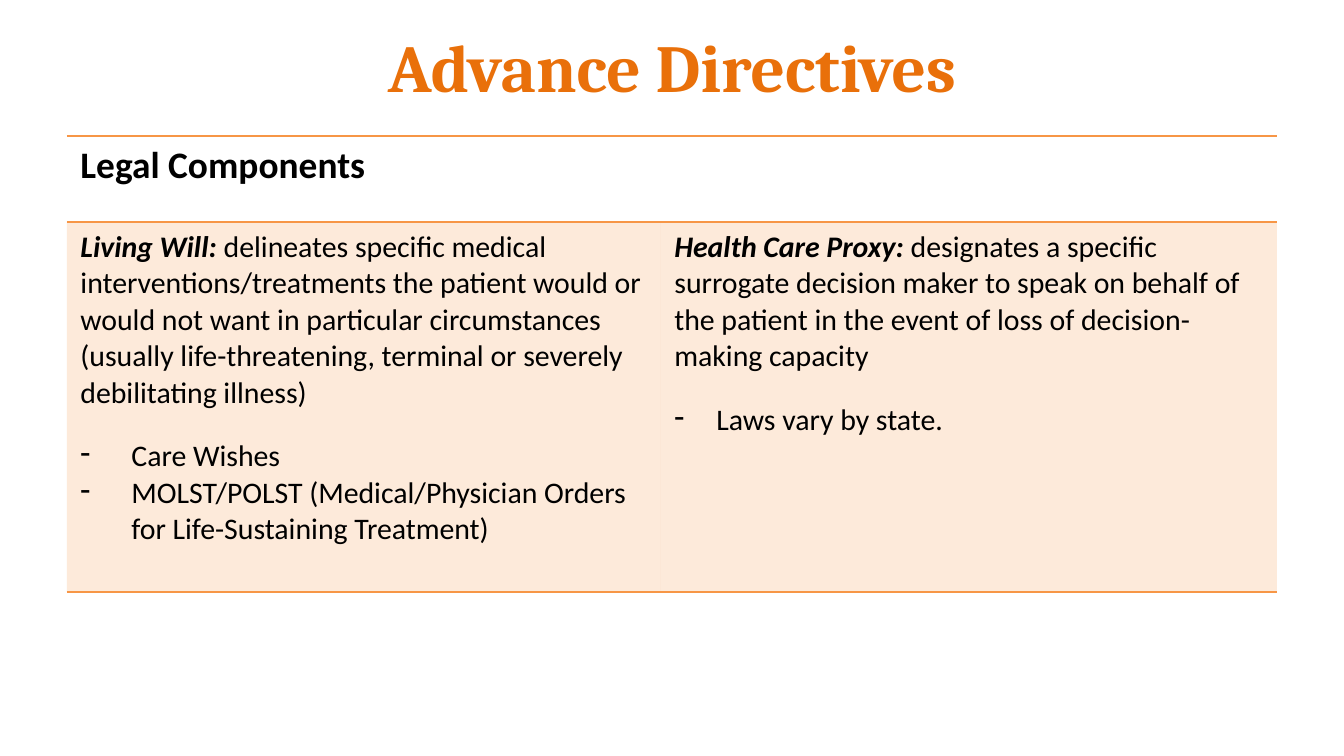
"""Build the Advance Directives slide with its table of legal components."""
from lxml import etree
from pptx import Presentation
from pptx.dml.color import RGBColor
from pptx.enum.text import MSO_ANCHOR, PP_ALIGN
from pptx.oxml.ns import qn
from pptx.util import Pt

CENTER = PP_ALIGN.CENTER
MIDDLE = MSO_ANCHOR.MIDDLE
PX = 914400 / 134.4
ORANGE = "F79646"
PLAIN_TABLE_STYLE = "{2D5ABB26-0587-4C30-8999-92F81FD0307C}"


def px(length):
    return round(length * PX)


def set_font(paragraph, name, size, color):
    paragraph.font.name = name
    paragraph.font.size = Pt(size)
    paragraph.font.color.rgb = RGBColor.from_string(color)


presentation = Presentation()
presentation.slide_width = px(1344)
presentation.slide_height = px(756)
slide = presentation.slides.add_slide(presentation.slide_layouts[5])

title = slide.shapes.title
title.left, title.top, title.width, title.height = px(67), px(3), px(1210), px(126)
title.text_frame.text = "Advance Directives"
title.text_frame.vertical_anchor = MIDDLE
paragraph = title.text_frame.paragraphs[0]
paragraph.alignment = CENTER
set_font(paragraph, "Cambria", 36, "E9700A")
paragraph.font.bold = True

frame = slide.shapes.add_table(2, 2, px(67), px(136), px(1210), px(456))
table = frame.table
table._tbl.tblPr.find(qn("a:tableStyleId")).text = PLAIN_TABLE_STYLE
table.first_row = False
table.horz_banding = False
for column, width in zip(table.columns, (594, 616)):
    column.width = px(width)
for row, height in zip(table.rows, (86, 370)):
    row.height = px(height)
table.cell(0, 0).merge(table.cell(0, 1))

heading = table.cell(0, 0).text_frame
heading.text = "Legal Components"
set_font(heading.paragraphs[0], "Calibri", 20, "000000")
heading.paragraphs[0].font.bold = True

components = [
    (
        "Living Will: ",
        "delineates specific medical interventions/treatments the patient would or "
        "would not want in particular circumstances (usually life-threatening, "
        "terminal or severely debilitating illness)",
        51,
        ["Care Wishes", "MOLST/POLST (Medical/Physician Orders for Life-Sustaining Treatment)"],
    ),
    (
        "Health Care Proxy: ",
        "designates a specific surrogate decision maker to speak on behalf of the "
        "patient in the event of loss of decision-making capacity",
        42,
        ["Laws vary by state."],
    ),
]
for column, (term, definition, indent, points) in enumerate(components):
    cell = table.cell(1, column)
    paragraph = cell.text_frame.paragraphs[0]
    term_run = paragraph.add_run()
    term_run.text = term
    term_run.font.bold = True
    term_run.font.italic = True
    paragraph.add_run().text = definition
    set_font(paragraph, "Calibri", 16, "000000")
    for number, point in enumerate(points):
        paragraph = cell.text_frame.add_paragraph()
        paragraph.text = point
        if number == 0:
            paragraph.space_before = Pt(14.6)
        properties = paragraph._p.get_or_add_pPr()
        properties.set("marL", str(px(indent)))
        properties.set("indent", str(-px(indent)))
        etree.SubElement(properties, qn("a:buChar"), char="-")
        set_font(paragraph, "Calibri", 16, "000000")

for row in range(2):
    for column in range(2):
        cell = table.cell(row, column)
        if row == 0:
            cell.fill.background()
        else:
            cell.fill.solid()
            cell.fill.fore_color.rgb = RGBColor.from_string(ORANGE)
            tint = cell._tc.tcPr.find(".//" + qn("a:srgbClr"))
            etree.SubElement(tint, qn("a:alpha"), val="20000")
        for position, side in enumerate(("a:lnT", "a:lnB")):
            border = etree.Element(qn(side), w=str(Pt(1)))
            line_fill = etree.SubElement(border, qn("a:solidFill"))
            etree.SubElement(line_fill, qn("a:srgbClr"), val=ORANGE)
            cell._tc.tcPr.insert(position, border)

presentation.save("out.pptx")
